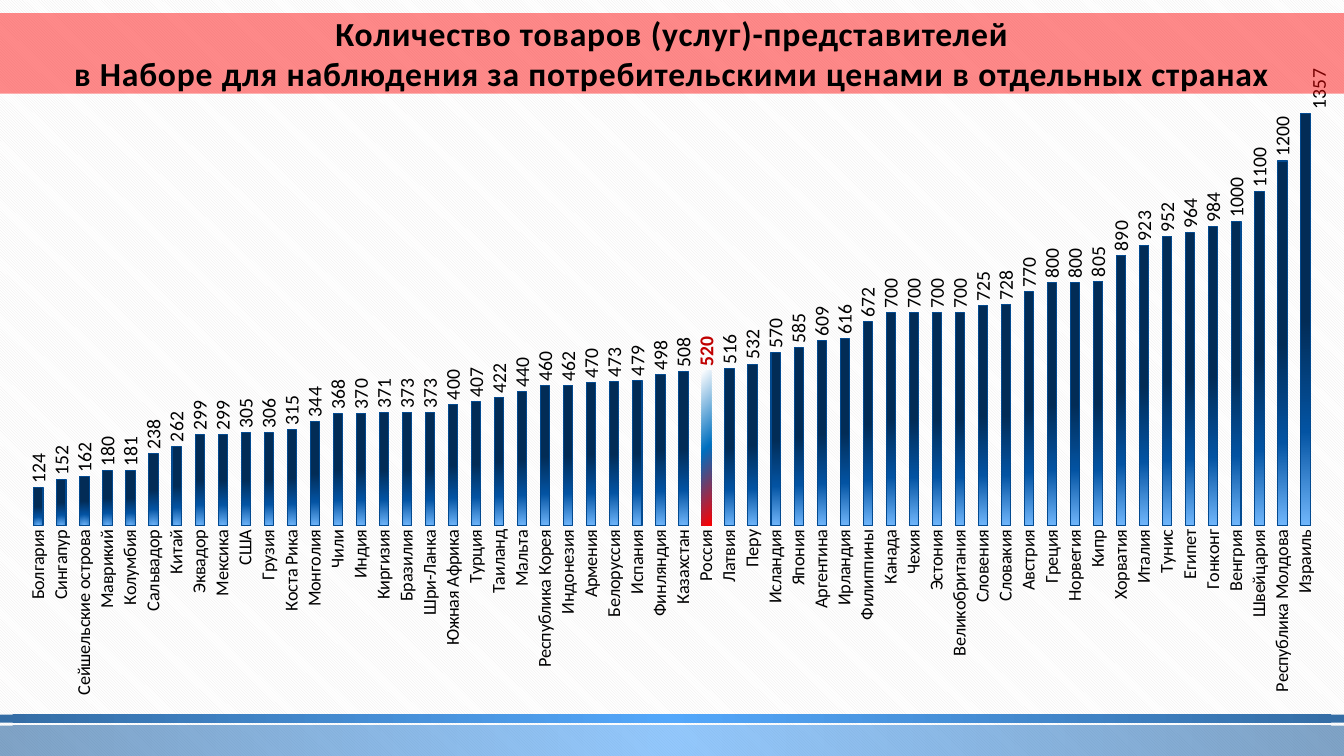
"""Build a slide with a column chart of price basket sizes by country."""
import pptx
import pptx.chart.data
import pptx.dml.color
import pptx.enum.chart
import pptx.enum.dml
import pptx.enum.shapes
import pptx.enum.text
import pptx.oxml.ns
import pptx.util
from lxml import etree

Inches = pptx.util.Inches
Pt = pptx.util.Pt
qn = pptx.oxml.ns.qn
HUES = {
    "black": "000000", "white": "FFFFFF", "stripe": "E9E7E7",
    "red": "FF0000", "crimson": "C00000", "mid": "0070C0",
    "sky": "2A93FB", "navy": "034A90",
    "pale": "71B7FC", "blue": "0353A2", "deep": "022C56",
}
FONT = "Calibri"
WIDE = 13.33


def hue(name):
    """Return the named colour."""
    return pptx.dml.color.RGBColor.from_string(HUES[name])


def blend(fill, stops, focus, alpha=100):
    """Give a fill a round gradient."""
    fill.gradient()
    grad = fill._xPr.find(qn("a:gradFill"))
    for child in list(grad):
        grad.remove(child)
    row = etree.SubElement(grad, qn("a:gsLst"))
    for place, name in stops:
        stop = etree.SubElement(row, qn("a:gs"), pos=str(place * 1000))
        tint = etree.SubElement(stop, qn("a:srgbClr"), val=HUES[name])
        if alpha < 100:
            etree.SubElement(tint, qn("a:alpha"), val=str(alpha * 1000))
    route = etree.SubElement(grad, qn("a:path"), path="circle")
    sides = {side: str(part * 1000) for side, part in zip("ltrb", focus)}
    etree.SubElement(route, qn("a:fillToRect"), **sides)


deck = pptx.Presentation()
deck.slide_width = Inches(WIDE)
deck.slide_height = Inches(7.5)
slide = deck.slides.add_slide(deck.slide_layouts[6])
back = slide.background.fill
back.patterned()
back.pattern = pptx.enum.dml.MSO_PATTERN.DARK_DOWNWARD_DIAGONAL
back.fore_color.rgb = hue("stripe")
back.back_color.rgb = hue("white")

box = pptx.enum.shapes.MSO_SHAPE.RECTANGLE
for top, high, alpha in [(7.2, 0.3, 50), (7.09, 0.08, 80)]:
    strip = slide.shapes.add_shape(box, 0, Inches(top), Inches(WIDE), Inches(high))
    strip.shadow.inherit = False
    strip.line.fill.background()
    blend(strip.fill, [(0, "sky"), (100, "navy")], (50, 50, 50, 50), alpha)

lands = [
    "Болгария", "Сингапур", "Сейшельские острова", "Маврикий", "Колумбия",
    "Сальвадор", "Китай", "Эквадор", "Мексика", "США", "Грузия", "Коста Рика",
    "Монголия", "Чили", "Индия", "Киргизия", "Бразилия", "Шри-Ланка",
    "Южная Африка", "Турция", "Таиланд", "Мальта", "Республика Корея",
    "Индонезия", "Армения", "Белоруссия", "Испания", "Финляндия", "Казахстан",
    "Россия", "Латвия", "Перу", "Исландия", "Япония", "Аргентина", "Ирландия",
    "Филиппины", "Канада", "Чехия", "Эстония", "Великобритания", "Словения",
    "Словакия", "Австрия", "Греция", "Норвегия", "Кипр", "Хорватия", "Италия",
    "Тунис", "Египет", "Гонконг", "Венгрия", "Швейцария", "Республика Молдова",
    "Израиль",
]
counts = [
    124, 152, 162, 180, 181, 238, 262, 299, 299, 305, 306, 315, 344, 368, 370,
    371, 373, 373, 400, 407, 422, 440, 460, 462, 470, 473, 479, 498, 508, 510,
    516, 532, 570, 585, 609, 616, 672, 700, 700, 700, 700, 725, 728, 770, 800,
    800, 805, 890, 923, 952, 964, 984, 1000, 1100, 1200, 1357,
]
data = pptx.chart.data.CategoryChartData()
data.categories = lands
data.add_series("Series 1", counts)
chart = slide.shapes.add_chart(
    pptx.enum.chart.XL_CHART_TYPE.COLUMN_CLUSTERED,
    0, Inches(0.68), Inches(WIDE), Inches(6.3), data).chart
chart.has_legend = False
chart.has_title = False
chart.font.name = FONT
chart.font.size = Pt(12)
chart.font.color.rgb = hue("black")

scale = chart.value_axis
scale.minimum_scale = 0
scale.maximum_scale = 1400
scale.has_major_gridlines = False
scale.visible = False
base = chart.category_axis
base.major_tick_mark = pptx.enum.chart.XL_TICK_MARK.NONE
base.format.line.fill.background()
base.tick_labels.font.size = Pt(13)
skip = etree.Element(qn("c:tickLblSkip"), val="1")
base._element.find(qn("c:noMultiLvlLbl")).addprevious(skip)

plot = chart.plots[0]
plot.gap_width = 150
plot.vary_by_categories = False
bars = plot.series[0]
blend(bars.format.fill, [(0, "pale"), (46, "blue"), (100, "deep")], (50, 130, 50, -30))
bars.format.line.color.rgb = hue("navy")
bars.format.line.width = Pt(0.75)
outer = pptx.enum.chart.XL_LABEL_POSITION.OUTSIDE_END
labels = bars.data_labels
labels.show_value = True
labels.position = outer
labels.font.size = Pt(14)

home = bars.points[lands.index("Россия")]
blend(home.format.fill, [(0, "red"), (50, "mid"), (100, "white")], (100, 100, 0, 0))
home.format.line.fill.background()
run = home.data_label.text_frame.paragraphs[0].add_run()
run.text = "520"
run.font.size = Pt(14)
run.font.bold = True
run.font.color.rgb = hue("crimson")
home.data_label.position = outer

last = bars.points[len(lands) - 1].data_label
last.font.size = Pt(14)
last.position = outer
shift = etree.Element(qn("c:layout"))
spot = etree.SubElement(shift, qn("c:manualLayout"))
etree.SubElement(spot, qn("c:x"), val="0.01")
etree.SubElement(spot, qn("c:y"), val="0")
last._get_or_add_dLbl().insert(1, shift)

for part in (bars._element, base._element):
    for body in part.iter(qn("a:bodyPr")):
        body.set("rot", "-5400000")
        body.set("vert", "horz")

area = chart._chartSpace.chart.plotArea
for old in area.findall(qn("c:layout")):
    area.remove(old)
frame = etree.Element(qn("c:layout"))
spot = etree.SubElement(frame, qn("c:manualLayout"))
for tag, val in [("layoutTarget", "inner"), ("xMode", "edge"), ("yMode", "edge"),
                 ("x", "0.02"), ("y", "0.05"), ("w", "0.96"), ("h", "0.67")]:
    etree.SubElement(spot, qn("c:" + tag), val=val)
area.insert(0, frame)

title = slide.shapes.add_shape(box, 0, Inches(0.13), Inches(WIDE), Inches(0.8))
title.shadow.inherit = False
title.line.fill.background()
title.fill.solid()
title.fill.fore_color.rgb = hue("red")
tint = title.fill._xPr.find(".//" + qn("a:srgbClr"))
etree.SubElement(tint, qn("a:alpha"), val="46000")
text = title.text_frame
text.word_wrap = True
text.vertical_anchor = pptx.enum.text.MSO_ANCHOR.MIDDLE
lines = [
    "Количество товаров (услуг)-представителей",
    "в Наборе для наблюдения за потребительскими ценами в отдельных странах",
]
for count, line in enumerate(lines):
    para = text.add_paragraph() if count else text.paragraphs[0]
    para.alignment = pptx.enum.text.PP_ALIGN.CENTER
    run = para.add_run()
    run.text = line
    run.font.name = FONT
    run.font.size = Pt(24)
    run.font.bold = True
    run.font.color.rgb = hue("black")
    run.font._element.set("spc", "60")

deck.save("out.pptx")
